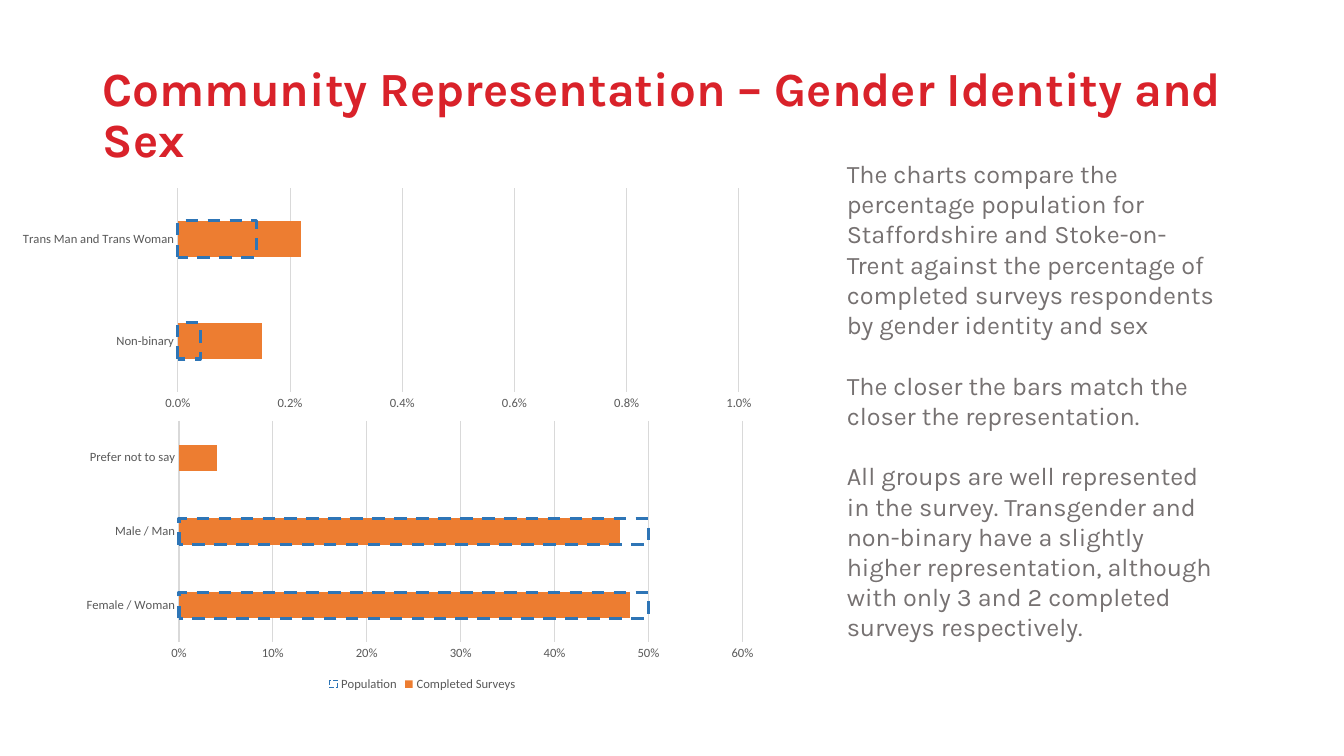
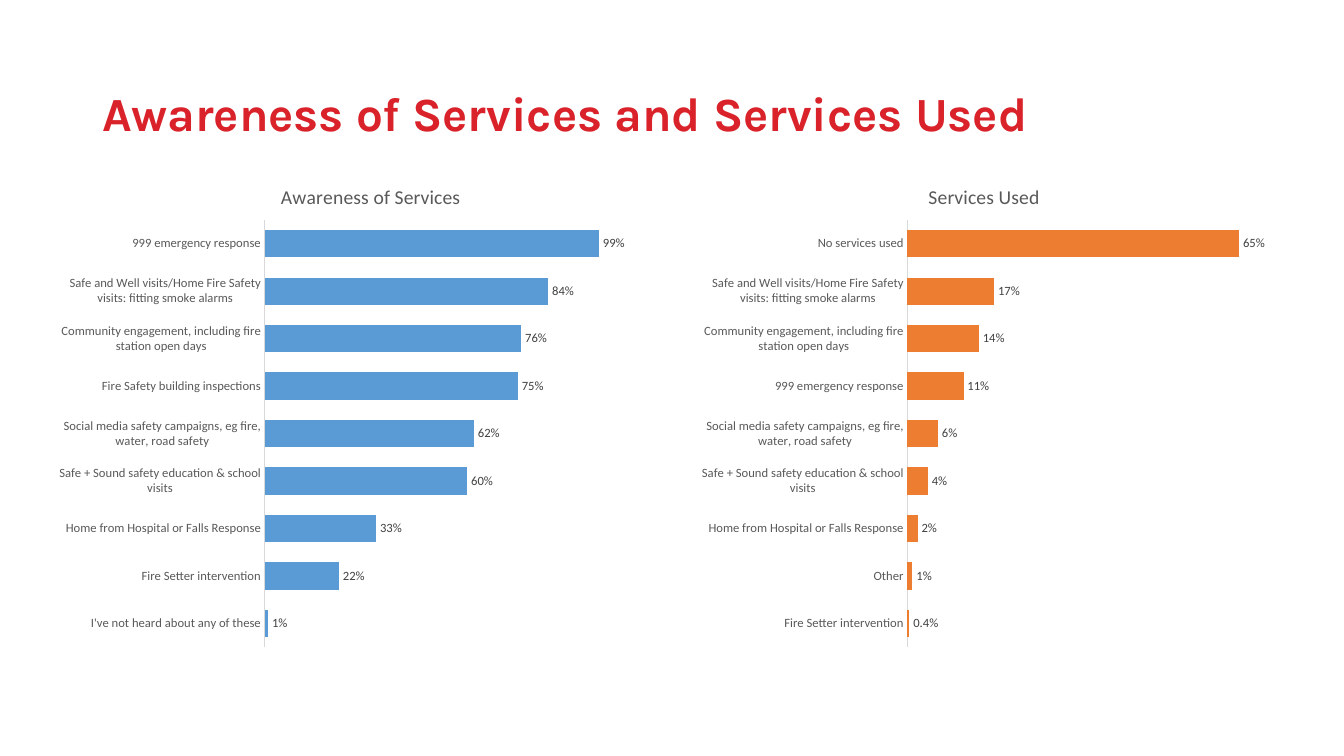
from dataclasses import dataclass

from lxml import etree
from pptx import Presentation
from pptx.chart.data import CategoryChartData
from pptx.dml.color import RGBColor
from pptx.enum import chart as chart_enum, dml, text
from pptx.oxml.ns import qn
from pptx.util import Inches, Pt


@dataclass(frozen=True)
class Theme:
    red: str = "D9222A"
    body_grey: str = "767171"
    axis_grey: str = "595959"
    label_grey: str = "404040"
    rule_grey: str = "D9D9D9"
    blue: str = "5B9BD5"
    dark_blue: str = "2E75B6"
    orange: str = "ED7D31"
    text_font: str = "Karla"
    chart_font: str = "Calibri"
    title_size: float = 34
    body_size: float = 18
    paragraph_gap: float = 21.6
    chart_title_size: float = 14
    chart_size: float = 9


THEME = Theme()
TITLE_BOX = (0.92, 0.85, 11.5, 0.61)
TITLE_ONLY_LAYOUT = 5

REPRESENTATION_TITLE = "Community Representation – Gender Identity and Sex"
REPRESENTATION_BOX = (8.3, 1.52, 3.89, 4.95)
REPRESENTATION_TEXT = [
    "The charts compare the percentage population for Staffordshire and Stoke-on-Trent "
    "against the percentage of completed surveys respondents by gender identity and sex",
    "The closer the bars match the closer the representation.",
    "All groups are well represented in the survey. Transgender and non-binary have a slightly "
    "higher representation, although with only 3 and 2 completed surveys respectively.",
]
# Plot areas are fractions of the chart: left, top, width, height.
REPRESENTATION_CHARTS = [
    dict(box=(0.11, 1.82, 7.52, 2.3), plot=(0.22, 0.02, 0.74, 0.88),
         rows=[("Non-binary", 0.0015, 0.0004), ("Trans Man and Trans Woman", 0.0022, 0.0014)],
         maximum=0.01, step=0.002, number_format="0.0%", legend=False),
    dict(box=(0.74, 4.12, 6.9, 2.78), plot=(0.15, 0.02, 0.81, 0.79),
         rows=[("Female / Woman", 0.48, 0.5), ("Male / Man", 0.47, 0.5),
               ("Prefer not to say", 0.04, None)],
         maximum=0.6, step=0.1, number_format="0%", legend=True),
]

SERVICES_TITLE = "Awareness of Services and Services Used"
EMERGENCY = "999 emergency response"
HOME_VISITS = "Safe and Well visits/Home Fire Safety visits: fitting smoke alarms"
COMMUNITY = "Community engagement, including fire station open days"
SOCIAL_MEDIA = "Social media safety campaigns, eg fire, water, road safety"
EDUCATION = "Safe + Sound safety education & school visits"
HOSPITAL = "Home from Hospital or Falls Response"
FIRE_SETTER = "Fire Setter intervention"
SERVICES_CHARTS = [
    dict(title="Awareness of Services", title_at=(0.36, 0.04), color=THEME.blue, maximum=1.2,
         box=(0.49, 1.59, 6.28, 4.93), plot=(0.34, 0.12, 0.64, 0.86),
         rows=[("I've not heard about any of these", 0.01), (FIRE_SETTER, 0.22),
               (HOSPITAL, 0.33), (EDUCATION, 0.6), (SOCIAL_MEDIA, 0.62),
               ("Fire Safety building inspections", 0.75), (COMMUNITY, 0.76),
               (HOME_VISITS, 0.84), (EMERGENCY, 0.99)]),
    dict(title="Services Used", title_at=(0.4, 0.04), color=THEME.orange, maximum=0.7,
         box=(6.85, 1.59, 5.81, 4.93), plot=(0.37, 0.12, 0.61, 0.86),
         rows=[(FIRE_SETTER, 0.004), ("Other", 0.01), (HOSPITAL, 0.02), (EDUCATION, 0.04),
               (SOCIAL_MEDIA, 0.06), (EMERGENCY, 0.11), (COMMUNITY, 0.14),
               (HOME_VISITS, 0.17), ("No services used", 0.65)]),
]


def inches(box):
    return [Inches(value) for value in box]


def format_font(font, name, size, color, bold=False):
    font.name, font.size, font.bold = name, Pt(size), bold
    font.color.rgb = RGBColor.from_string(color)


def format_chart_font(font, color=THEME.axis_grey, size=THEME.chart_size):
    format_font(font, THEME.chart_font, size, color)


def format_line(line, color, width):
    line.color.rgb = RGBColor.from_string(color)
    line.width = Pt(width)


def add_titled_slide(presentation, title):
    slide = presentation.slides.add_slide(presentation.slide_layouts[TITLE_ONLY_LAYOUT])
    shape = slide.shapes.title
    shape.left, shape.top, shape.width, shape.height = inches(TITLE_BOX)
    frame = shape.text_frame
    frame.text = title
    frame.auto_size = text.MSO_AUTO_SIZE.NONE
    frame.vertical_anchor = text.MSO_ANCHOR.MIDDLE
    paragraph = frame.paragraphs[0]
    paragraph.alignment = text.PP_ALIGN.LEFT
    paragraph.line_spacing = 0.9
    format_font(paragraph.runs[0].font, THEME.text_font, THEME.title_size, THEME.red, bold=True)
    return slide


def add_paragraphs(slide, box, paragraphs):
    frame = slide.shapes.add_textbox(*inches(box)).text_frame
    frame.word_wrap = True
    for index, content in enumerate(paragraphs):
        paragraph = frame.add_paragraph() if index else frame.paragraphs[0]
        paragraph.text = content
        if index:
            paragraph.space_before = Pt(THEME.paragraph_gap)
        format_font(paragraph.runs[0].font, THEME.text_font, THEME.body_size, THEME.body_grey)


def set_layout(parent, position, inner=False):
    """Fix a chart part at fractions of the chart: left, top and, if given, width, height."""
    for old in parent.findall(qn("c:layout")):
        parent.remove(old)
    layout = etree.Element(qn("c:layout"))
    manual = etree.SubElement(layout, qn("c:manualLayout"))
    settings = [("layoutTarget", "inner")] if inner else []
    settings += [("xMode", "edge"), ("yMode", "edge"), *zip("xywh", position)]
    for tag, value in settings:
        etree.SubElement(manual, qn(f"c:{tag}")).set("val", str(value))
    text_part = parent.find(qn("c:tx"))
    parent.insert(0 if text_part is None else 1, layout)


def add_bar_chart(slide, box, plot, rows, names, maximum, gap):
    data = CategoryChartData()
    data.categories = [row[0] for row in rows]
    for column, name in enumerate(names, 1):
        data.add_series(name, [row[column] for row in rows])
    chart = slide.shapes.add_chart(
        chart_enum.XL_CHART_TYPE.BAR_CLUSTERED, *inches(box), data).chart
    format_chart_font(chart.font)
    chart.has_title = chart.has_legend = False
    bars = chart.plots[0]
    bars.gap_width, bars.vary_by_categories = gap, False
    for series in bars.series:
        series.invert_if_negative = False
    for axis in (chart.category_axis, chart.value_axis):
        axis.major_tick_mark = axis.minor_tick_mark = chart_enum.XL_TICK_MARK.NONE
        axis.has_major_gridlines = False
        format_chart_font(axis.tick_labels.font)
    format_line(chart.category_axis.format.line, THEME.rule_grey, 0.75)
    chart.value_axis.minimum_scale, chart.value_axis.maximum_scale = 0, maximum
    set_layout(chart.element.find(".//" + qn("c:plotArea")), plot, inner=True)
    return chart


def fill_series(series, color):
    series.format.fill.solid()
    series.format.fill.fore_color.rgb = RGBColor.from_string(color)


def add_representation_chart(slide, box, plot, rows, maximum, step, number_format, legend):
    chart = add_bar_chart(slide, box, plot, rows, ["Completed Surveys", "Population"],
                          maximum, gap=182)
    chart.plots[0].overlap = 100
    surveys, population = chart.plots[0].series
    fill_series(surveys, THEME.orange)
    population.format.fill.background()
    format_line(population.format.line, THEME.dark_blue, 2.25)
    population.format.line.dash_style = dml.MSO_LINE.DASH
    axis = chart.value_axis
    axis.major_unit = step
    axis.has_major_gridlines = True
    format_line(axis.major_gridlines.format.line, THEME.rule_grey, 0.75)
    axis.format.line.fill.background()
    axis.tick_labels.number_format = number_format
    axis.tick_labels.number_format_is_linked = False
    if legend:
        chart.has_legend = True
        chart.legend.position = chart_enum.XL_LEGEND_POSITION.BOTTOM
        chart.legend.include_in_layout = False
        format_chart_font(chart.legend.font)


def add_services_chart(slide, title, title_at, color, maximum, box, plot, rows):
    chart = add_bar_chart(slide, box, plot, rows, [title], maximum, gap=75)
    chart.value_axis.visible = False
    fill_series(chart.plots[0].series[0], color)
    chart.has_title = True
    frame = chart.chart_title.text_frame
    frame.text = title
    format_chart_font(frame.paragraphs[0].runs[0].font, size=THEME.chart_title_size)
    chart.chart_title.include_in_layout = False
    set_layout(chart.element.find(".//" + qn("c:title")), title_at)
    chart.plots[0].has_data_labels = True
    labels = chart.plots[0].data_labels
    labels.show_value = True
    labels.position = chart_enum.XL_LABEL_POSITION.OUTSIDE_END
    labels.number_format = "[<0.01]0.0%;0%"
    labels.number_format_is_linked = False
    format_chart_font(labels.font, THEME.label_grey)


def main():
    presentation = Presentation()
    presentation.slide_width, presentation.slide_height = Inches(13.33), Inches(7.5)

    slide = add_titled_slide(presentation, REPRESENTATION_TITLE)
    add_paragraphs(slide, REPRESENTATION_BOX, REPRESENTATION_TEXT)
    for settings in REPRESENTATION_CHARTS:
        add_representation_chart(slide, **settings)

    slide = add_titled_slide(presentation, SERVICES_TITLE)
    for settings in SERVICES_CHARTS:
        add_services_chart(slide, **settings)

    presentation.save("out.pptx")


if __name__ == "__main__":
    main()
